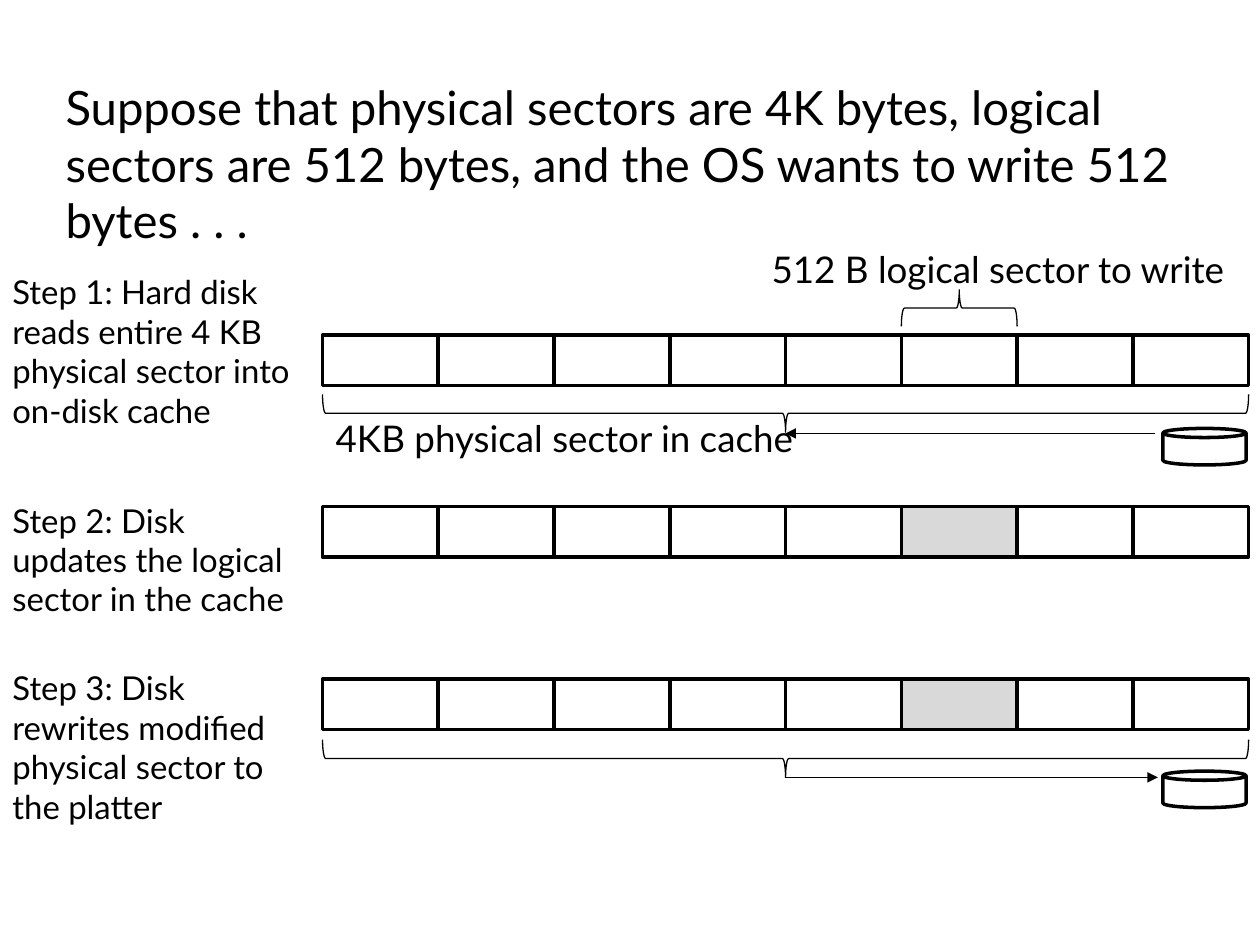
from pptx import Presentation
from pptx.dml.color import RGBColor
from pptx.enum.shapes import MSO_CONNECTOR as Connector, MSO_SHAPE as Shape
from pptx.enum.text import MSO_ANCHOR as Anchor, MSO_AUTO_SIZE as AutoSize, PP_ALIGN as Align
from pptx.oxml.ns import qn
from pptx.util import Inches, Pt
from lxml import etree

BLACK, WHITE, GREY = "000000", "FFFFFF", "D9D9D9"
ROW_LEFT, ROW_WIDTH, SECTOR_COUNT, SECTOR_HEIGHT = 2.56, 7.35, 8, 0.4
SECTOR_WIDTH = ROW_WIDTH / SECTOR_COUNT
WRITTEN_SECTOR = 5
WRITTEN_LEFT = ROW_LEFT + WRITTEN_SECTOR * SECTOR_WIDTH
DISK_LEFT, DISK_WIDTH, DISK_HEIGHT = 9.23, 0.66, 0.29
ROW_CENTRE = ROW_LEFT + ROW_WIDTH / 2


def color(value):
    return RGBColor.from_string(value)


def write(box, text, size, align=Align.LEFT):
    frame = box.text_frame
    frame_format = {"word_wrap": True, "auto_size": AutoSize.NONE,
                    "vertical_anchor": Anchor.TOP}
    for name, value in frame_format.items():
        setattr(frame, name, value)
    para = frame.paragraphs[0]
    para.alignment = align
    span = para.add_run()
    span.text = text
    for name, value in {"name": "Lato", "size": Pt(size)}.items():
        setattr(span.font, name, value)
    span.font.color.rgb = color(BLACK)


def add_label(group, area, text, size, align=Align.LEFT):
    box = group.shapes.add_textbox(*map(Inches, area))
    write(box, text, size, align)


def add_outlined(group, kind, area, fill=WHITE, weight=2):
    shape = group.shapes.add_shape(kind, *map(Inches, area))
    shape.shadow.inherit = False
    if fill:
        shape.fill.solid()
        shape.fill.fore_color.rgb = color(fill)
    else:
        shape.fill.background()
    shape.line.color.rgb = color(BLACK)
    shape.line.width = Pt(weight)
    return shape


def add_sectors(group, top, written_fill):
    for index in range(SECTOR_COUNT):
        area = (ROW_LEFT + index * SECTOR_WIDTH, top, SECTOR_WIDTH, SECTOR_HEIGHT)
        add_outlined(group, Shape.RECTANGLE, area,
                     written_fill if index == WRITTEN_SECTOR else WHITE)


def add_brace(group, left, top, width, height, rotation):
    """Place a turned left brace by the area it covers on the page."""
    area = (left + (width - height) / 2, top + (height - width) / 2, height, width)
    brace = add_outlined(group, Shape.LEFT_BRACE, area, fill=None, weight=0.75)
    brace.rotation = rotation


def add_row_brace(group, top):
    add_brace(group, ROW_LEFT, top, ROW_WIDTH, 0.3, 270)


def add_disk(group, top):
    add_outlined(group, Shape.CAN, (DISK_LEFT, top, DISK_WIDTH, DISK_HEIGHT))


def add_arrow(group, start, end, height):
    ends = map(Inches, (start, height, end, height))
    arrow = group.shapes.add_connector(Connector.STRAIGHT, *ends)
    arrow.line.color.rgb = color(BLACK)
    arrow.line.width = Pt(0.5)
    etree.SubElement(arrow.line._get_or_add_ln(), qn("a:tailEnd"), type="triangle")
    etree.SubElement(arrow._element.spPr, qn("a:effectLst"))


def add_step(page, text, text_area, row_top, written_fill):
    group = page.shapes.add_group_shape()
    add_label(group, text_area, text, 18.8)
    add_sectors(group, row_top, written_fill)
    return group


def main():
    deck = Presentation()
    deck.slide_width, deck.slide_height = Inches(10), Inches(7.5)
    page = deck.slides.add_slide(deck.slide_layouts[5])

    # Title
    title = page.shapes.title
    place = {"left": 0.42, "top": 0.57, "width": 9.21, "height": 1.01}
    for name, value in place.items():
        setattr(title, name, Inches(value))
    write(title, "Suppose that physical sectors are 4K bytes, logical sectors are "
                 "512 bytes, and the OS wants to write 512 bytes . . .", 27)

    # Step 1: read from the disk into the cache
    read = add_step(page, "Step 1: Hard disk reads entire 4 KB physical sector into "
                          "on-disk cache", (0, 2.11, 2.56, 1.36), 2.66, WHITE)
    add_label(read, (5.93, 1.91, 3.98, 0.45), "512 B logical sector to write", 21, Align.CENTER)
    add_brace(read, WRITTEN_LEFT, 2.3, SECTOR_WIDTH, 0.29, 90)
    add_row_brace(read, 3.13)
    add_label(read, (2.56, 3.25, 3.84, 0.45), "4KB physical sector in cache", 21, Align.CENTER)
    add_disk(read, 3.4)
    add_arrow(read, 9.17, ROW_CENTRE, 3.44)

    # Step 2: update the cache
    add_step(page, "Step 2: Disk updates the logical sector in the cache",
             (0, 3.92, 2.49, 1.05), 4.02, GREY)

    # Step 3: write the cache back to the disk
    rewrite = add_step(page, "Step 3: Disk rewrites modified physical sector to the platter",
                       (0, 5.25, 2.48, 1.36), 5.39, GREY)
    add_row_brace(rewrite, 5.87)
    add_disk(rewrite, 6.12)
    add_arrow(rewrite, ROW_CENTRE, 9.19, 6.17)

    deck.save("out.pptx")


if __name__ == "__main__":
    main()
